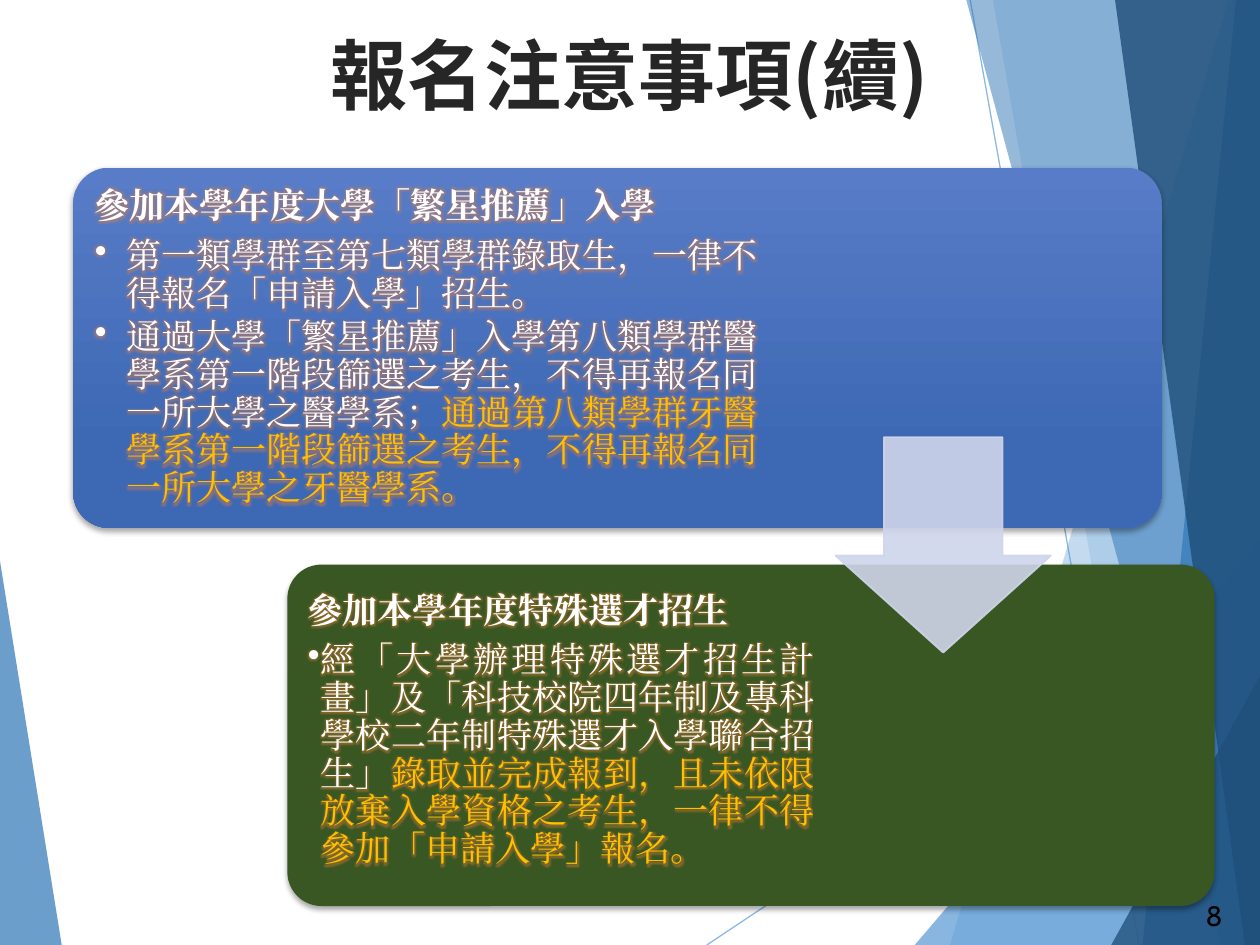
"""Build the slide of admission registration notes with two linked panels."""
from lxml.etree import SubElement
from pptx import Presentation
from pptx.dml.color import RGBColor
from pptx.enum.shapes import MSO_CONNECTOR as Connector, MSO_SHAPE as Shape
from pptx.enum.text import MSO_ANCHOR as Anchor, PP_ALIGN as Align
from pptx.oxml.ns import qn
from pptx.util import Pt

SKY = RGBColor(0x5B, 0x9B, 0xD5)
BLUE = RGBColor(0x2E, 0x75, 0xB6)
NAVY = RGBColor(0x1F, 0x4E, 0x79)
PANEL_TOP = RGBColor(0x58, 0x7C, 0xC7)
PANEL_BOTTOM = RGBColor(0x3D, 0x68, 0xB4)
GREEN = RGBColor(0x38, 0x57, 0x23)
ARROW = RGBColor(0xCF, 0xD5, 0xEA)
WHITE = RGBColor(0xFF, 0xFF, 0xFF)
GOLD = RGBColor(0xFF, 0xC0, 0x00)
GLOW = RGBColor(0xED, 0x7D, 0x31)
INK = RGBColor(0x26, 0x26, 0x26)
BLACK = RGBColor(0, 0, 0)

SANS, SERIF, NUMBER = "Noto Sans CJK SC", "Times New Roman", "Cabin"
WIDTH, HEIGHT = 720, 540
EDGE = 720.7

RAYS = [((403.9, HEIGHT), (EDGE, 329)), ((554.4, 0), (650.9, HEIGHT))]
FACETS = [
    (SKY, 36, [(702, 0), (542.9, HEIGHT), (EDGE, HEIGHT), (EDGE, 0)]),
    (SKY, 20, [(567.4, 0), (661.7, HEIGHT), (EDGE, HEIGHT), (EDGE, 0)]),
    (SKY, 72, [(522.7, HEIGHT), (WIDTH, 308.9), (EDGE, HEIGHT)]),
    (BLUE, 50, [(552.2, 0), (698.4, HEIGHT), (EDGE, HEIGHT), (EDGE, 0)]),
    (BLUE, 66, [(706.3, 0), (653, HEIGHT), (EDGE, HEIGHT), (EDGE, 0)]),
    (NAVY, 80, [(637.2, 0), (711.4, HEIGHT), (EDGE, HEIGHT), (EDGE, 0)]),
    (NAVY, 76, [(635, HEIGHT), (EDGE, 385.2), (EDGE, HEIGHT)]),
    (BLUE, 70, [(-0.7, 316.1), (35.3, HEIGHT), (-0.7, HEIGHT)]),
]
PANELS = [
    {"box": (41.8, 95.8, 622.1, 205.9), "text_box": (48.2, 102.2, 393.1, 193.7),
     "fills": (PANEL_TOP, PANEL_BOTTOM), "indent": 18, "align": Align.LEFT,
     "heading": "參加本學年度大學「繁星推薦」入學", "heading_spacing": 0.9,
     "bullets": [
         [("第一類學群至第七類學群錄取生，一律不得報名「申請入學」招生。", WHITE)],
         [("通過大學「繁星推薦」入學第八類學群醫學系第一階段篩選之考生，不得再報名同一所大學之醫學系；", WHITE),
          ("通過第八類學群牙醫學系第一階段篩選之考生，不得再報名同一所大學之牙醫學系。", GOLD)]]},
    {"box": (164.2, 322.6, 529.9, 195.1), "text_box": (169.9, 328.3, 301.7, 184.3),
     "fills": (GREEN,), "indent": 7.2, "align": Align.JUSTIFY,
     "heading": "參加本學年度特殊選才招生", "heading_spacing": Pt(16),
     "bullets": [
         [("經「大學辦理特殊選才招生計畫」及「科技校院四年制及專科學校二年制特殊選才入學聯合招生」", WHITE),
          ("錄取並完成報到，且未依限放棄入學資格之考生，一律不得參加「申請入學」報名。", GOLD)]]},
]


def points(values):
    return [Pt(value) for value in values]


def set_alpha(parent, percent):
    for color in parent.iter(qn("a:srgbClr")):
        SubElement(color, qn("a:alpha"), val=str(percent * 1000))


def add_effect(parent, kind, color, percent, **settings):
    effects = SubElement(parent, qn("a:effectLst"))
    effect = SubElement(effects, qn(f"a:{kind}"), **settings)
    SubElement(effect, qn("a:srgbClr"), val=str(color))
    set_alpha(effect, percent)
    return effects


def style_run(run, font_name, size, color, bold=False, glow=False):
    run.font.size, run.font.bold = Pt(size), bold
    run.font.color.rgb = color
    properties = run.font._element
    if glow:
        add_effect(properties, "glow", GLOW, 40, rad=str(Pt(5)))
    for script in ("latin", "ea"):
        SubElement(properties, qn(f"a:{script}"), typeface=font_name)


def add_text_box(slide, box, anchor=Anchor.TOP):
    shape = slide.shapes.add_textbox(*points(box))
    shape.text_frame.word_wrap = True
    shape.text_frame.vertical_anchor = anchor
    return shape.text_frame


def add_label(slide, box, text, font_name, size, color, bold, align, anchor):
    paragraph = add_text_box(slide, box, anchor).paragraphs[0]
    paragraph.text, paragraph.alignment = text, align
    style_run(paragraph.runs[0], font_name, size, color, bold)


def add_background(slide):
    for start, end in RAYS:
        line = slide.shapes.add_connector(Connector.STRAIGHT, *points(start + end))
        line.line.color.rgb, line.line.width = SKY, Pt(0.75)
        set_alpha(line._element.spPr, 70)
        SubElement(line._element.spPr, qn("a:effectLst"))
    for color, alpha, corners in FACETS:
        first, *others = [points(corner) for corner in corners]
        builder = slide.shapes.build_freeform(*first)
        builder.add_line_segments(others)
        facet = builder.convert_to_shape()
        facet.shadow.inherit = False
        facet.fill.solid()
        facet.fill.fore_color.rgb = color
        facet.line.fill.background()
        set_alpha(facet._element.spPr, alpha)


def add_panel(slide, panel):
    shape = slide.shapes.add_shape(Shape.ROUNDED_RECTANGLE, *points(panel["box"]))
    shape.adjustments[0] = 0.1
    shape.line.fill.background()
    if len(panel["fills"]) == 2:
        shape.fill.gradient()
        shape.fill.gradient_angle = 270
        for stop, color, position in zip(shape.fill.gradient_stops, panel["fills"], (0, 0.78)):
            stop.color.rgb, stop.position = color, position
    else:
        shape.fill.solid()
        shape.fill.fore_color.rgb = panel["fills"][0]
    add_effect(shape._element.spPr, "outerShdw", BLACK, 35,
               blurRad=str(Pt(3)), dist=str(Pt(2)), dir="5400000", rotWithShape="0")

    frame = add_text_box(slide, panel["text_box"], Anchor.MIDDLE)
    frame.margin_left = frame.margin_right = Pt(6)
    frame.margin_top = frame.margin_bottom = Pt(6)
    heading = frame.paragraphs[0]
    heading.text = panel["heading"]
    heading.line_spacing, heading.space_after = panel["heading_spacing"], Pt(7)
    style_run(heading.runs[0], SERIF, 20, WHITE, True, True)
    for parts in panel["bullets"]:
        paragraph = frame.add_paragraph()
        paragraph.alignment, paragraph.level = panel["align"], 1
        paragraph.line_spacing, paragraph.space_after = 0.9, Pt(3)
        properties = paragraph._p.get_or_add_pPr()
        properties.set("marL", str(Pt(panel["indent"])))
        properties.set("indent", str(-Pt(panel["indent"])))
        SubElement(properties, qn("a:buChar"), char="•")
        for text, color in parts:
            run = paragraph.add_run()
            run.text = text
            style_run(run, SERIF, 20, color, glow=True)


def add_arrow(slide):
    arrow = slide.shapes.add_shape(Shape.DOWN_ARROW, *points((477.4, 249.8, 123.1, 123.1)))
    arrow.adjustments[0], arrow.adjustments[1] = 0.55, 0.45
    arrow.shadow.inherit = False
    arrow.fill.solid()
    arrow.fill.fore_color.rgb = ARROW
    arrow.line.color.rgb, arrow.line.width = ARROW, Pt(1)
    set_alpha(arrow._element.spPr, 90)


def main():
    presentation = Presentation()
    presentation.slide_width, presentation.slide_height = Pt(WIDTH), Pt(HEIGHT)
    slide = presentation.slides.add_slide(presentation.slide_layouts[6])
    add_background(slide)
    add_label(slide, (681.8, 509.8, 37.4, 26.6), "8", NUMBER, 16, BLACK, False,
              Align.LEFT, Anchor.TOP)
    add_label(slide, (32.4, 16.6, 654.5, 51.1), "報名注意事項(續)", SANS, 44, INK, True,
              Align.CENTER, Anchor.MIDDLE)
    for panel in PANELS:
        add_panel(slide, panel)
    add_arrow(slide)
    presentation.save("out.pptx")


if __name__ == "__main__":
    main()
